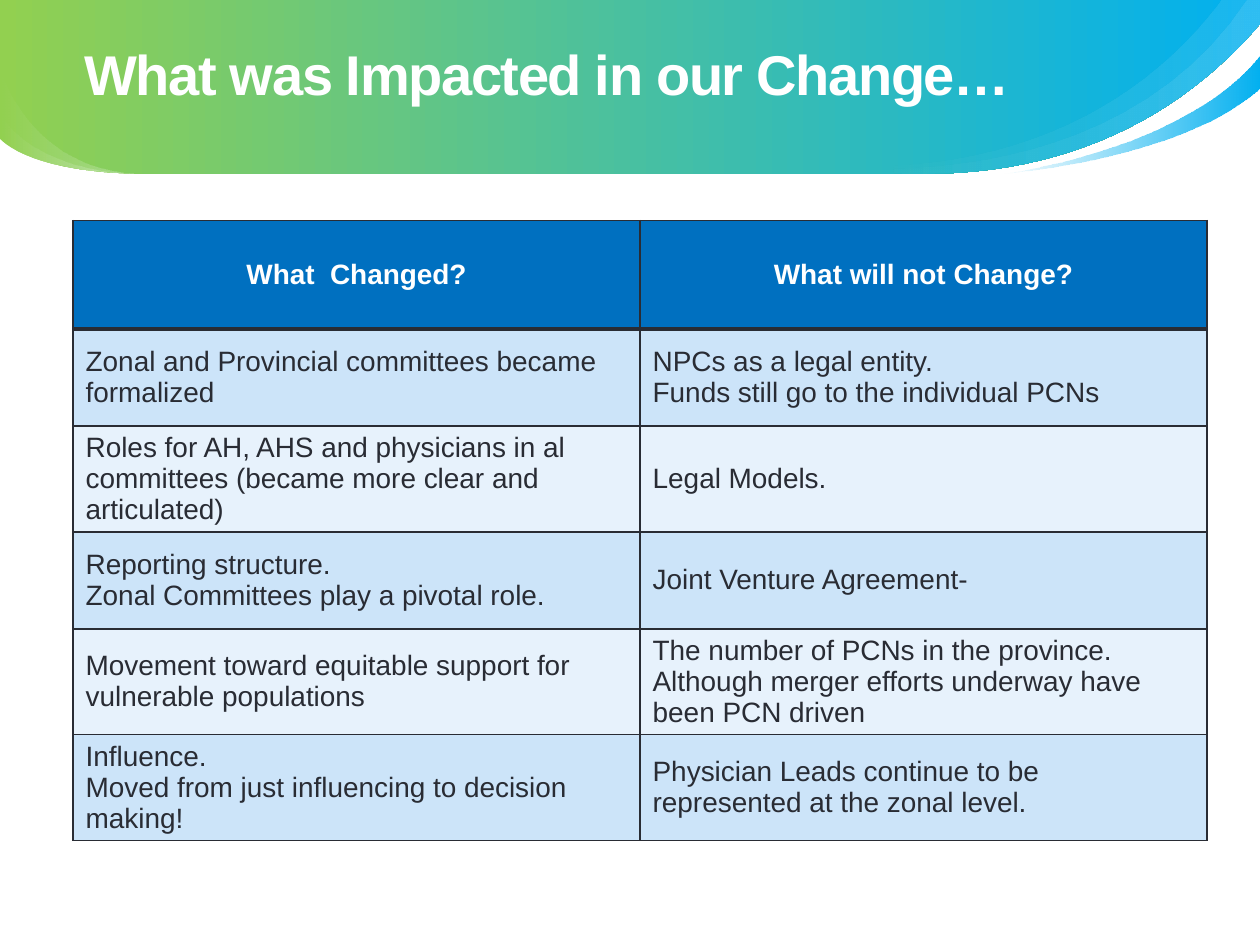
from dataclasses import dataclass

from pptx import Presentation
from pptx import util as u
from pptx.dml.color import RGBColor
from pptx.enum import text
from pptx.oxml import parse_xml
from pptx.oxml.ns import nsdecls, qn


@dataclass(frozen=True)
class Theme:
    font: str = "Arial"
    title_size: int = 32
    table_size: int = 16
    white: str = "FFFFFF"
    ink: str = "292C34"
    green: str = "92D050"
    sky: str = "00B0F0"
    header: str = "0070C0"
    stripes: tuple = ("CCE4F9", "E7F2FC")


THEME = Theme()
WIDTH, HEIGHT = 10, 7.5
BAND = 1.38  # height of the coloured band
CURVE_STEPS = 24

ROWS = [
    (["What  Changed?"], ["What will not Change?"]),
    (["Zonal and Provincial committees became formalized"],
     ["NPCs as a legal entity.", "Funds still go to the individual PCNs"]),
    (["Roles for AH, AHS and physicians in al committees "
      "(became more clear and articulated)"],
     ["Legal Models."]),
    (["Reporting structure.", "Zonal Committees play a pivotal role."],
     ["Joint Venture Agreement-"]),
    (["Movement toward equitable support for vulnerable populations"],
     ["The number of PCNs in the province.",
      "Although merger efforts underway have been PCN driven"]),
    (["Influence.", "Moved from just influencing to decision making!"],
     ["Physician Leads continue to be represented at the zonal level."]),
]


def curve(*controls):
    """Points along a cubic Bezier curve given by four control points."""
    points = []
    for step in range(CURVE_STEPS + 1):
        t = step / CURVE_STEPS
        weights = ((1 - t) ** 3, 3 * t * (1 - t) ** 2, 3 * t * t * (1 - t), t ** 3)
        points.append(tuple(sum(w * c[axis] for w, c in zip(weights, controls))
                            for axis in (0, 1)))
    return points


def add_swoosh(page, points, stops):
    """Filled outline; each stop is (position, colour, opacity in percent)."""
    # The builder rounds its coordinates, so they are given in EMU
    start, *rest = [(u.Inches(x), u.Inches(y)) for x, y in points]
    builder = page.shapes.build_freeform(*start)
    builder.add_line_segments(rest, close=True)
    shape = builder.convert_to_shape()
    shape.shadow.inherit = False
    shape.line.fill.background()
    shape.fill.gradient()
    shape.fill.gradient_angle = 0
    for stop, (position, colour, _) in zip(shape.fill.gradient_stops, stops):
        stop.position = position
        stop.color.rgb = RGBColor.from_string(colour)
    colours = shape._element.spPr.iter(qn("a:srgbClr"))
    for element, (_, _, opacity) in zip(list(colours), stops):
        if opacity < 100:
            element.append(parse_xml(
                f'<a:alpha {nsdecls("a")} val="{opacity * 1000}"/>'))


def add_band(page):
    right_edge = curve((WIDTH, 0.19), (9.35, 0.95), (8.45, BAND), (7.34, BAND))
    left_edge = curve((1.14, BAND), (0.21, 1.37), (0, 1.1), (0, 1.1))
    sheen_tail = curve((7.25, BAND), (6.83, BAND), (6.53, 1.31), (6.51, 1.31))
    sheen = [(0.15, THEME.white, 0), (1, THEME.white, 10)]
    glow = [(0, THEME.white, 0), (1, THEME.white, 30)]

    def add_sheen(top_curve):
        add_swoosh(page, [*top_curve, (WIDTH, 0), *right_edge, *sheen_tail], sheen)

    def add_glow(top):
        rise = curve((0, top), (0, top), (0.21, 1.36), (1.14, BAND))
        add_swoosh(page, left_edge + rise, glow)

    # Main band and the ribbon under its right end
    add_swoosh(page, [(WIDTH, 0), *right_edge, *left_edge, (0, 0)],
               [(0, THEME.green, 100), (1, THEME.sky, 100)])
    add_swoosh(page, curve((7.94, BAND), (7.94, BAND), (9.4, 1.2), (WIDTH, 0.43))
               + curve((WIDTH, 0.69), (WIDTH, 0.69), (9.54, 1.22), (7.94, BAND)),
               [(0, THEME.sky, 0), (1, THEME.sky, 100)])

    # Translucent highlights at both ends
    add_sheen(curve((6.51, 1.31), (8.32, 1.43), (9.26, 0.58), (9.69, 0)))
    add_glow(0.89)
    add_glow(0.53)
    add_sheen(curve((6.51, 1.31), (6.58, 1.32), (8.82, 1.62), (9.89, 0)))


def add_span(para, words, size, colour, bold):
    span = para.add_run()
    span.text = words
    span.font.name = THEME.font
    span.font.size = u.Pt(size)
    span.font.bold = bold
    span.font.color.rgb = RGBColor.from_string(colour)
    return span


def add_title(page, words):
    title = page.shapes.title
    title.left, title.top = u.Inches(0.67), u.Inches(0.23)
    title.width, title.height = u.Inches(8.66), u.Inches(0.65)
    page.shapes._spTree.append(title._element)  # in front of the band
    frame = title.text_frame
    frame.margin_left = frame.margin_right = 0
    frame.margin_top = frame.margin_bottom = 0
    frame.vertical_anchor = text.MSO_ANCHOR.MIDDLE
    frame.auto_size = text.MSO_AUTO_SIZE.NONE
    para = frame.paragraphs[0]
    para.alignment = text.PP_ALIGN.LEFT
    para.line_spacing = u.Pt(42)
    span = add_span(para, words, THEME.title_size, THEME.white, True)
    span.font._element.set("spc", "-80")


def set_borders(cell, top, bottom):
    properties = cell._tc.get_or_add_tcPr()
    for side, width in (("L", 1), ("R", 1), ("T", top), ("B", bottom)):
        properties.append(parse_xml(
            f'<a:ln{side} {nsdecls("a")} w="{u.Pt(width)}"><a:solidFill>'
            f'<a:srgbClr val="{THEME.ink}"/></a:solidFill></a:ln{side}>'))


def fill_cell(cell, lines, row):
    is_header = row == 0
    set_borders(cell, top=3 if row == 1 else 1, bottom=3 if is_header else 1)
    cell.fill.solid()
    cell.fill.fore_color.rgb = RGBColor.from_string(
        THEME.header if is_header else THEME.stripes[(row - 1) % 2])
    cell.vertical_anchor = text.MSO_ANCHOR.MIDDLE
    for index, line in enumerate(lines):
        frame = cell.text_frame
        para = frame.add_paragraph() if index else frame.paragraphs[0]
        para.alignment = text.PP_ALIGN.CENTER if is_header else text.PP_ALIGN.LEFT
        add_span(para, line, THEME.table_size,
                 THEME.white if is_header else THEME.ink, is_header)


def add_comparison(page):
    header_height, row_height = 0.86, 0.77
    height = header_height + row_height * (len(ROWS) - 1)
    table = page.shapes.add_table(
        len(ROWS), 2, u.Inches(0.58), u.Inches(1.75),
        u.Inches(0.9 * WIDTH), u.Inches(height)).table
    for row, entries in enumerate(ROWS):
        table.rows[row].height = u.Inches(row_height if row else header_height)
        for column, lines in enumerate(entries):
            fill_cell(table.cell(row, column), lines, row)


def main():
    deck = Presentation()
    deck.slide_width, deck.slide_height = u.Inches(WIDTH), u.Inches(HEIGHT)
    page = deck.slides.add_slide(deck.slide_layouts[5])  # Title Only
    add_band(page)
    add_title(page, "What was Impacted in our Change…")
    add_comparison(page)
    deck.save("out.pptx")


if __name__ == "__main__":
    main()
